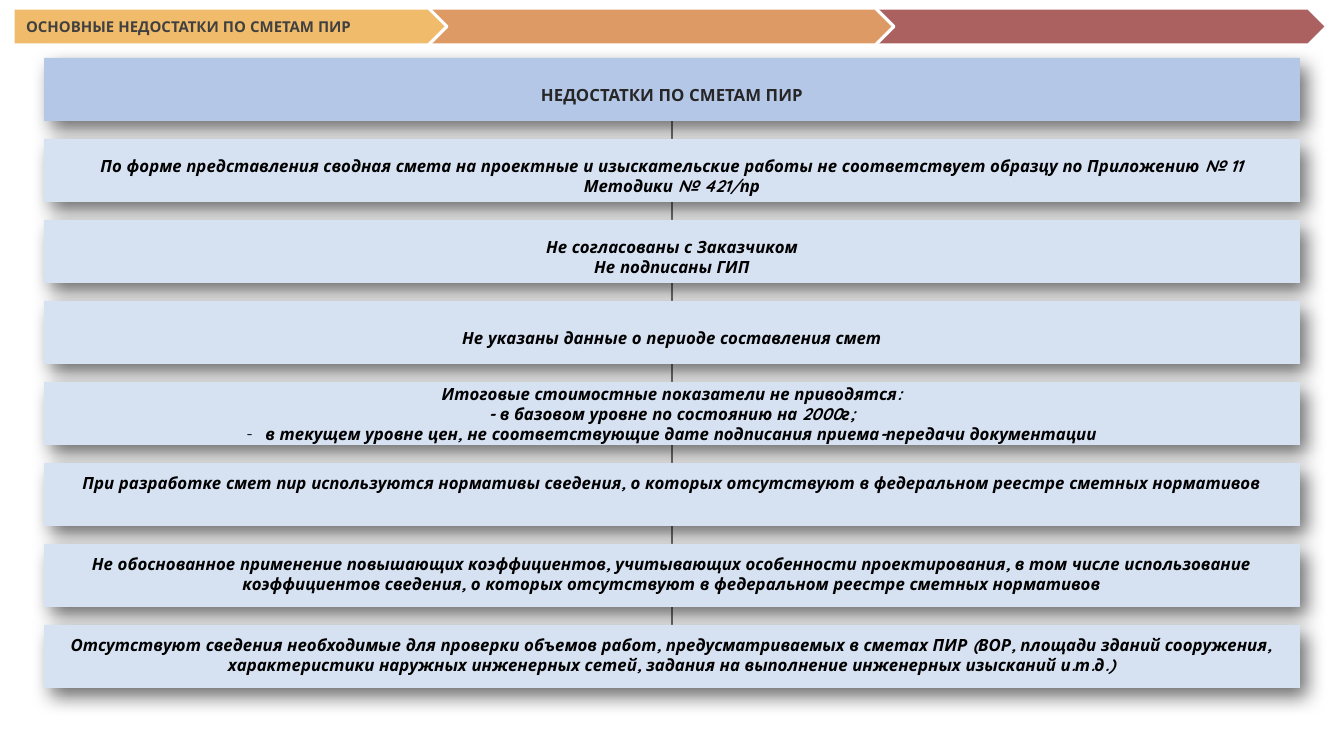
from dataclasses import dataclass

from lxml import etree
from pptx import Presentation
from pptx import util as u
from pptx.dml.color import RGBColor
from pptx.enum import shapes, text
from pptx.oxml import ns

EMU_PER_PX = 914400 / 100.8
FONT = "Quicksand"

WHITE = RGBColor(0xFF, 0xFF, 0xFF)
BLACK = RGBColor(0x00, 0x00, 0x00)
TITLE_GREY = RGBColor(0x40, 0x40, 0x40)
HEADING_GREY = RGBColor(0x26, 0x26, 0x26)
LINE_GREY = RGBColor(0x76, 0x71, 0x71)
YELLOW = RGBColor(0xF0, 0xBB, 0x6B)
ORANGE = RGBColor(0xDD, 0x9A, 0x65)
RED = RGBColor(0xAC, 0x61, 0x61)
HEADING_BLUE = RGBColor(0xB4, 0xC7, 0xE7)
PALE_BLUE = RGBColor(0xD6, 0xE1, 0xF2)

BOX_LEFT, BOX_TOP, BOX_WIDTH, BOX_HEIGHT, BOX_STEP = 44, 58, 1256, 63, 81
RIBBON_TOP, RIBBON_HEIGHT = 8, 37
SIDE_MARGIN, TITLE_MARGIN = 10, 13

MIDDLE = text.MSO_ANCHOR.MIDDLE
TOP = text.MSO_ANCHOR.TOP
HEADING_FORMAT = {"name": FONT, "size": u.Pt(12), "bold": True, "italic": False}
ITEM_FORMAT = {**HEADING_FORMAT, "italic": True}
TITLE_FORMAT = {**HEADING_FORMAT, "size": u.Pt(10.7)}


@dataclass(frozen=True)
class Ribbon:
    left: int
    width: int
    color: RGBColor


@dataclass(frozen=True)
class Box:
    lines: tuple[str, ...]
    anchor: text.MSO_ANCHOR = MIDDLE
    margin_top: int = 11
    fill: RGBColor = PALE_BLUE
    color: RGBColor = BLACK
    bulleted_last: bool = False


RIBBONS = (Ribbon(871, 456, RED), Ribbon(420, 474, ORANGE), Ribbon(13, 434, YELLOW))

HEADING = Box(("НЕДОСТАТКИ ПО СМЕТАМ ПИР",), fill=HEADING_BLUE, color=HEADING_GREY)
ITEMS = (
    Box(("По форме представления сводная смета на проектные и изыскательские работы "
         "не соответствует образцу по Приложению № 11 Методики № 421/пр",)),
    Box(("Не согласованы с Заказчиком", "Не подписаны ГИП")),
    Box(("Не указаны данные о периоде составления смет",)),
    Box(("Итоговые стоимостные показатели не приводятся:",
         "- в базовом уровне по состоянию на 2000г;",
         "в текущем уровне цен, не соответствующие дате подписания "
         "приема-передачи документации"), margin_top=0, bulleted_last=True),
    Box(("При разработке смет пир используются нормативы сведения, о которых "
         "отсутствуют в федеральном реестре сметных нормативов",), TOP, 10),
    Box(("Не обоснованное применение повышающих коэффициентов, учитывающих "
         "особенности проектирования, в том числе использование коэффициентов "
         "сведения, о которых отсутствуют в федеральном реестре сметных нормативов",),
        TOP, 10),
    Box(("Отсутствуют сведения необходимые для проверки объемов работ, "
         "предусматриваемых в сметах ПИР (ВОР, площади зданий сооружения, "
         "характеристики наружных инженерных сетей, задания на выполнение "
         "инженерных изысканий и.т.д.)",), TOP, 10),
)


def px(length: int) -> u.Emu:
    return u.Emu(round(length * EMU_PER_PX))


def apply_format(target, values: dict) -> None:
    for name, value in values.items():
        setattr(target, name, value)


def add_filled_shape(slide, kind, left: int, top: int, width: int, height: int,
                     color: RGBColor):
    shape = slide.shapes.add_shape(kind, px(left), px(top), px(width), px(height))
    shape.shadow.inherit = False
    shape.fill.solid()
    shape.fill.fore_color.rgb = color
    return shape


def add_soft_shadow(shape) -> None:
    effects = shape.element.spPr.find(ns.qn("a:effectLst"))
    shadow = etree.SubElement(effects, ns.qn("a:outerShdw"), blurRad=str(u.Pt(14.6)),
                              dist=str(u.Pt(7.5)), dir="3300000", algn="tl",
                              rotWithShape="0")
    color = etree.SubElement(shadow, ns.qn("a:srgbClr"), val="000000")
    etree.SubElement(color, ns.qn("a:alpha"), val="56000")


def add_dash_bullet(paragraph) -> None:
    properties = paragraph._p.get_or_add_pPr()
    properties.set("marL", str(px(19)))
    properties.set("indent", str(-px(19)))
    etree.SubElement(properties, ns.qn("a:buFont"), typeface=FONT)
    etree.SubElement(properties, ns.qn("a:buChar"), char="-")


def add_ribbon(slide, ribbon: Ribbon) -> None:
    shape = add_filled_shape(slide, shapes.MSO_SHAPE.PENTAGON, ribbon.left, RIBBON_TOP,
                             ribbon.width, RIBBON_HEIGHT, ribbon.color)
    shape.line.color.rgb = WHITE
    shape.line.width = u.Pt(2.25)


def place_title(slide, ribbon: Ribbon, wording: str) -> None:
    """Put the title placeholder in front of its ribbon."""
    title = slide.shapes.title
    title.element.getparent().append(title.element)
    apply_format(title, {"left": px(ribbon.left), "top": px(RIBBON_TOP),
                         "width": px(ribbon.width), "height": px(RIBBON_HEIGHT)})
    frame = title.text_frame
    apply_format(frame, {"text": wording, "word_wrap": True, "vertical_anchor": MIDDLE,
                         "auto_size": text.MSO_AUTO_SIZE.NONE,
                         "margin_left": px(TITLE_MARGIN),
                         "margin_right": px(TITLE_MARGIN),
                         "margin_top": 0, "margin_bottom": 0})
    paragraph = frame.paragraphs[0]
    paragraph.alignment = text.PP_ALIGN.LEFT
    font = paragraph.runs[0].font
    apply_format(font, TITLE_FORMAT)
    font.color.rgb = TITLE_GREY


def add_box(slide, box: Box, row: int, font_format: dict) -> None:
    shape = add_filled_shape(slide, shapes.MSO_SHAPE.RECTANGLE, BOX_LEFT,
                             BOX_TOP + row * BOX_STEP, BOX_WIDTH, BOX_HEIGHT, box.fill)
    shape.line.fill.background()
    add_soft_shadow(shape)
    frame = shape.text_frame
    apply_format(frame, {"text": "\n".join(box.lines), "word_wrap": True,
                         "vertical_anchor": box.anchor,
                         "margin_left": px(SIDE_MARGIN), "margin_right": px(SIDE_MARGIN),
                         "margin_top": px(box.margin_top), "margin_bottom": 0})
    for paragraph in frame.paragraphs:
        paragraph.alignment = text.PP_ALIGN.CENTER
        font = paragraph.runs[0].font
        apply_format(font, font_format)
        font.color.rgb = box.color
    if box.bulleted_last:
        add_dash_bullet(frame.paragraphs[-1])


def add_trunk(slide) -> None:
    """Draw the line that joins the heading to the last box."""
    center = px(BOX_LEFT + BOX_WIDTH // 2)
    line = slide.shapes.add_connector(
        shapes.MSO_CONNECTOR.STRAIGHT, center, px(BOX_TOP + BOX_HEIGHT),
        center, px(BOX_TOP + len(ITEMS) * BOX_STEP))
    line.line.color.rgb = LINE_GREY
    line.line.width = u.Pt(1.5)
    etree.SubElement(line.element.spPr, ns.qn("a:effectLst"))


def main() -> None:
    presentation = Presentation()
    presentation.slide_width = px(1344)
    presentation.slide_height = px(756)
    slide = presentation.slides.add_slide(presentation.slide_layouts[5])
    add_trunk(slide)
    for ribbon in RIBBONS:
        add_ribbon(slide, ribbon)
    place_title(slide, RIBBONS[-1], "ОСНОВНЫЕ НЕДОСТАТКИ ПО СМЕТАМ ПИР")
    add_box(slide, HEADING, 0, HEADING_FORMAT)
    for row, item in enumerate(ITEMS, start=1):
        add_box(slide, item, row, ITEM_FORMAT)
    presentation.save("out.pptx")


if __name__ == "__main__":
    main()
